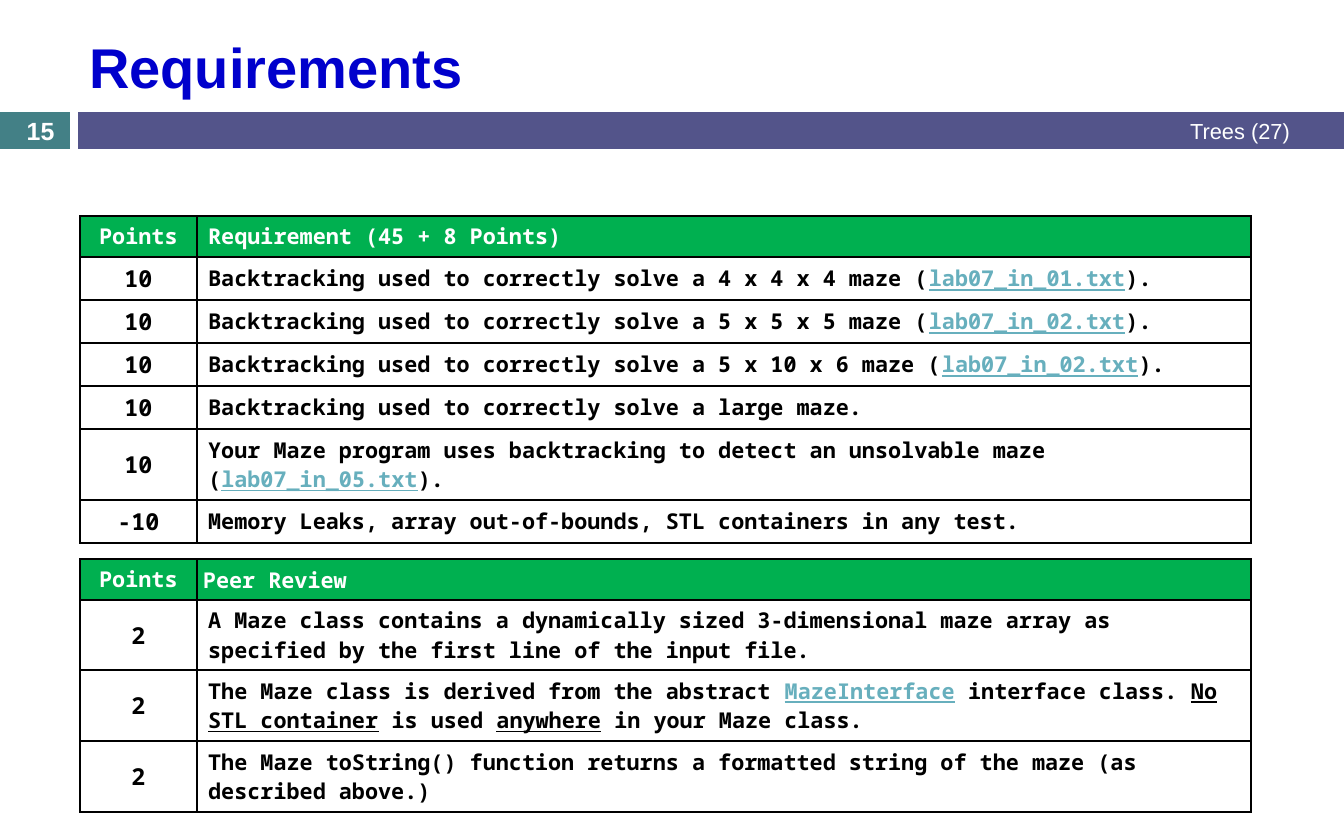
from pptx import Presentation
from pptx.dml.color import RGBColor
from pptx.enum.shapes import MSO_SHAPE
from pptx.enum.text import MSO_ANCHOR, PP_ALIGN
from pptx.oxml.ns import qn
from pptx.util import Pt
from lxml import etree

EMU_PER_PX = 914400 / 112
RECT = MSO_SHAPE.RECTANGLE
MIDDLE = MSO_ANCHOR.MIDDLE
LEFT, CENTER, RIGHT = PP_ALIGN.LEFT, PP_ALIGN.CENTER, PP_ALIGN.RIGHT
TITLE_ONLY = 5
SANS, MONO = "Arial", "Noto Sans Mono"
WHITE, BLACK, BLUE, GREEN = "FFFFFF", "000000", "0000CC", "00B050"
TEAL, INDIGO, LINK = "438086", "53548A", "67AFBD"
SIDES = ("left", "top", "right", "bottom")

REQUIREMENTS = [
    ("Points", ["Requirement (45 + 8 Points)"]),
    ("10", ["Backtracking used to correctly solve a 4 x 4 x 4 maze (",
            ("lab07_in_01.txt", LINK), ")."]),
    ("10", ["Backtracking used to correctly solve a 5 x 5 x 5 maze (",
            ("lab07_in_02.txt", LINK), ")."]),
    ("10", ["Backtracking used to correctly solve a 5 x 10 x 6 maze (",
            ("lab07_in_02.txt", LINK), ")."]),
    ("10", ["Backtracking used to correctly solve a large maze."]),
    ("10", ["Your Maze program uses backtracking to detect an unsolvable maze (",
            ("lab07_in_05.txt", LINK), ")."]),
    ("-10", ["Memory Leaks, array out-of-bounds, STL containers in any test."]),
]
PEER_REVIEW = [
    ("Points", ["Peer Review"]),
    ("2", ["A Maze class contains a dynamically sized 3-dimensional maze array "
           "as specified by the first line of the input file."]),
    ("2", ["The Maze class is derived from the abstract ", ("MazeInterface", LINK),
           " interface class. ", ("No STL container", BLACK), " is used ",
           ("anywhere", BLACK), " in your Maze class."]),
    ("2", ["The Maze toString() function returns a formatted string of the maze "
           "(as described above.)"]),
]


def px(n):
    return round(n * EMU_PER_PX)


def rgb(value):
    return RGBColor.from_string(value)


def set_attrs(obj, values):
    for name, value in values.items():
        setattr(obj, name, value)


def add_run(p, text, size, color, font=MONO, bold=True, underline=False):
    r = p.add_run()
    r.text = text
    set_attrs(r.font, {"name": font, "size": Pt(size), "bold": bold,
                       "underline": underline})
    r.font.color.rgb = rgb(color)


def write_line(sp, text, size, color, align, bold):
    tf = sp.text_frame
    set_attrs(tf, {"word_wrap": True, "vertical_anchor": MIDDLE})
    p = tf.paragraphs[0]
    p.alignment = align
    add_run(p, text, size, color, SANS, bold)


def add_title(slide, box, text):
    sp = slide.shapes.title
    set_attrs(sp, dict(zip(("left", "top", "width", "height"), map(px, box))))
    write_line(sp, text, 36, BLUE, LEFT, True)


def add_band(slide, box, number, label):
    x, y, w, h = box
    number_w, bar_x, label_w = 70, 78, 610
    for left, width, color in ((x, number_w, TEAL), (x + bar_x, w - bar_x, INDIGO)):
        sp = slide.shapes.add_shape(RECT, px(left), px(y), px(width), px(h))
        sp.shadow.inherit = False
        sp.fill.solid()
        sp.fill.fore_color.rgb = rgb(color)
        sp.line.fill.background()
    for left, width, text, size, align, bold in (
        (x + w - 43 - label_w, label_w, label, 14, RIGHT, False),
        (x, number_w + 11, number, 16, CENTER, True),
    ):
        sp = slide.shapes.add_textbox(px(left), px(y), px(width), px(h))
        write_line(sp, text, size, WHITE, align, bold)


def set_borders(cell):
    tc_pr = cell._tc.get_or_add_tcPr()
    for tag in ("a:lnL", "a:lnR", "a:lnT", "a:lnB"):
        ln = etree.SubElement(tc_pr, qn(tag), w=str(Pt(1)))
        fill = etree.SubElement(ln, qn("a:solidFill"))
        etree.SubElement(fill, qn("a:srgbClr"), val=BLACK)


def fill_cell(cell, runs, size, color, align, header):
    set_borders(cell)
    if header:
        cell.fill.solid()
        cell.fill.fore_color.rgb = rgb(GREEN)
    else:
        cell.fill.background()
    cell.vertical_anchor = MIDDLE
    p = cell.text_frame.paragraphs[0]
    p.alignment = align
    for run in runs:
        if isinstance(run, tuple):
            text, run_color = run
            add_run(p, text, size, run_color, underline=True)
        else:
            add_run(p, run, size, color)


def add_points_table(slide, box, rows, heights):
    x, y, w, h = box
    points_w = 117
    table = slide.shapes.add_table(len(rows), 2, px(x), px(y), px(w), px(h)).table
    table.horz_banding = False
    for col, width in zip(table.columns, (points_w, w - points_w)):
        col.width = px(width)
    for i, ((points, runs), height) in enumerate(zip(rows, heights)):
        header = i == 0
        color = WHITE if header else BLACK
        table.rows[i].height = px(height)
        fill_cell(table.cell(i, 0), [points], 14 if header else 15, color, CENTER, header)
        fill_cell(table.cell(i, 1), runs, 14, color, LEFT, header)
    return table


def main():
    prs = Presentation()
    set_attrs(prs, {"slide_width": px(1344), "slide_height": px(840)})
    slide = prs.slides.add_slide(prs.slide_layouts[TITLE_ONLY])
    add_band(slide, (0, 112, 1344, 37), "15", "Trees (27)")
    add_title(slide, (78, 21, 1222, 90), "Requirements")
    add_points_table(slide, (80, 216, 1171, 327), REQUIREMENTS,
                     (41, 43, 43, 43, 43, 71, 43))
    table = add_points_table(slide, (80, 559, 1171, 253), PEER_REVIEW,
                             (41, 70, 71, 71))
    for col, margin in enumerate((1, 6)):
        set_attrs(table.cell(0, col), {f"margin_{side}": px(margin) for side in SIDES})
    prs.save("out.pptx")


if __name__ == "__main__":
    main()
